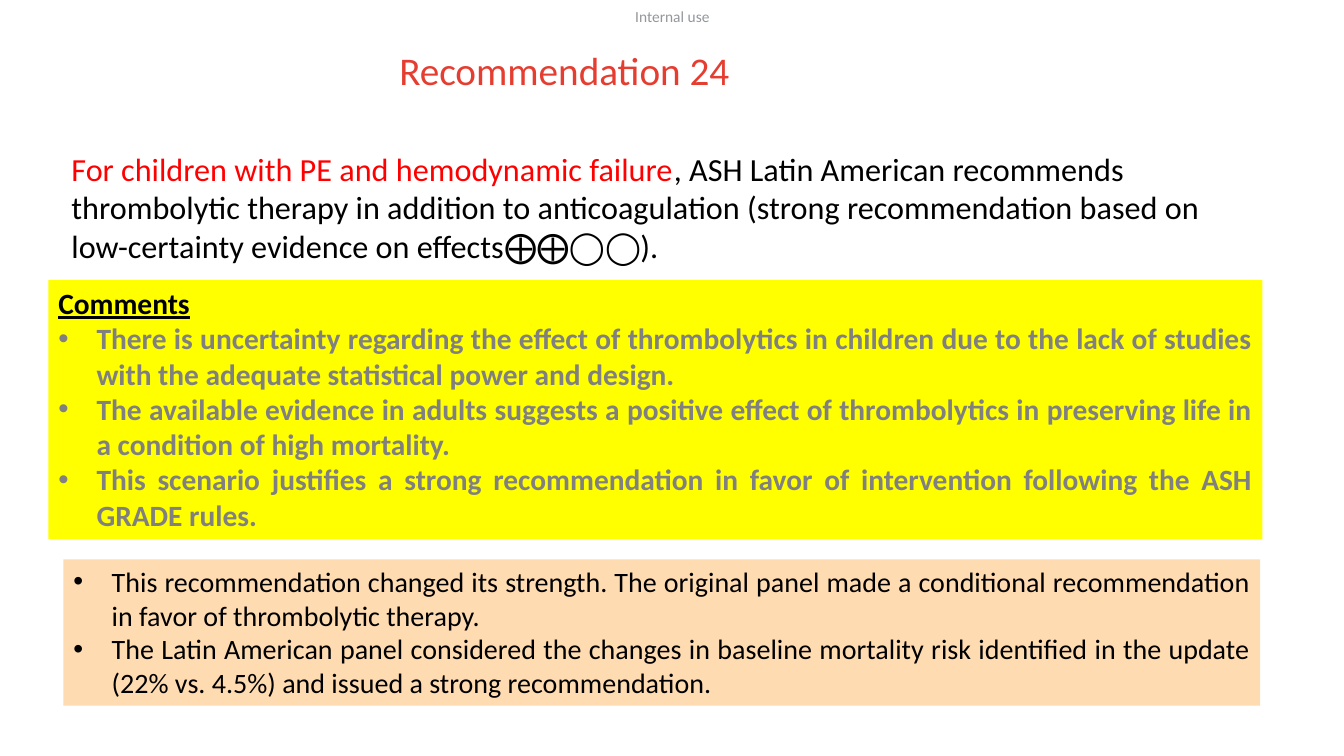
from lxml import etree
from pptx import Presentation
from pptx.dml.color import RGBColor
from pptx.enum.shapes import MSO_SHAPE
from pptx.enum.text import MSO_ANCHOR, PP_ALIGN
from pptx.oxml.ns import qn
from pptx.util import Inches, Pt

RECT = MSO_SHAPE.RECTANGLE
TOP = MSO_ANCHOR.TOP
LEFT, JUST = PP_ALIGN.LEFT, PP_ALIGN.JUSTIFY

THEME = {
    "font": "Calibri",
    "label": 11, "title": 28, "lead": 23, "comment": 21, "note": 20,
    "black": "000000", "gray": "808080", "pale": "93979B",
    "coral": "E53E31", "red": "FF0000",
    "yellow": "FFFF00", "peach": "FEDBB1",
}

LABEL = "Internal use"
TITLE = "Recommendation 24"
LEAD = [
    ("For children with PE and hemodynamic failure", "red"),
    (", ASH Latin American recommends thrombolytic therapy in addition to "
     "anticoagulation (strong recommendation based on low-certainty evidence "
     "on effects⨁⨁◯◯).", "black"),
]
HEAD = "Comments"
COMMENTS = [
    "There is uncertainty regarding the effect of thrombolytics in children "
    "due to the lack of studies with the adequate statistical power and design.",
    "The available evidence in adults suggests a positive effect of "
    "thrombolytics in preserving life in a condition of high mortality.",
    "This scenario justifies a strong recommendation in favor of intervention "
    "following the ASH GRADE rules.",
]
NOTES = [
    "This recommendation changed its strength. The original panel made a "
    "conditional recommendation in favor of thrombolytic therapy.",
    "The Latin American panel considered the changes in baseline mortality "
    "risk identified in the update (22% vs. 4.5%) and issued a strong "
    "recommendation.",
]


def color(name):
    return RGBColor.from_string(THEME[name])


def add_box(slide, area, fill=None, inset=True):
    area = [Inches(n) for n in area]
    if fill:
        box = slide.shapes.add_shape(RECT, *area)
        box.shadow.inherit = False
        box.fill.solid()
        box.fill.fore_color.rgb = color(fill)
        box.line.fill.background()
    else:
        box = slide.shapes.add_textbox(*area)
    frame = box.text_frame
    frame.word_wrap = True
    frame.vertical_anchor = TOP
    if not inset:
        frame.margin_left = frame.margin_right = 0
        frame.margin_top = frame.margin_bottom = 0
    return frame


def add_bullet(para):
    props = para._p.get_or_add_pPr()
    props.set("marL", str(Inches(0.38)))
    props.set("indent", str(Inches(-0.38)))
    etree.SubElement(props, qn("a:buFont")).set("typeface", "Arial")
    etree.SubElement(props, qn("a:buChar")).set("char", "•")


def write(frame, lines, size, tint, bold=False, bullet=False):
    for line in lines:
        para = frame.paragraphs[-1]
        if para.runs:
            para = frame.add_paragraph()
        if bullet:
            add_bullet(para)
        para.alignment = JUST if bullet else LEFT
        para.font.name = THEME["font"]
        para.font.size = Pt(THEME[size])
        para.font.bold = bold
        parts = line
        if isinstance(line, str):
            parts = [(line, None)]
            para.font.color.rgb = color(tint)
        for text, shade in parts:
            run = para.add_run()
            run.text = text
            if shade:
                run.font.color.rgb = color(shade)
    return para


deck = Presentation()
deck.slide_width, deck.slide_height = Inches(13.33), Inches(7.5)
slide = deck.slides.add_slide(deck.slide_layouts[6])

label = add_box(slide, (6.3, 0.07, 0.78, 0.18), inset=False)
label.word_wrap = False
write(label, [LABEL], "label", "pale")

panel = add_box(slide, (0.48, 2.78, 12.04, 2.57), "yellow")
head = write(panel, [HEAD], "comment", "black", bold=True)
head.font.underline = True
write(panel, COMMENTS, "comment", "gray", bold=True, bullet=True)

title = add_box(slide, (3.96, 0.51, 3.72, 0.54), inset=False)
write(title, [TITLE], "title", "coral").line_spacing = 0.9

lead = add_box(slide, (0.61, 1.43, 11.52, 1.26))
write(lead, [LEAD], "lead", "black")

note = add_box(slide, (0.63, 5.55, 11.87, 1.45), "peach")
write(note, NOTES, "note", "black", bullet=True)

deck.save("out.pptx")
